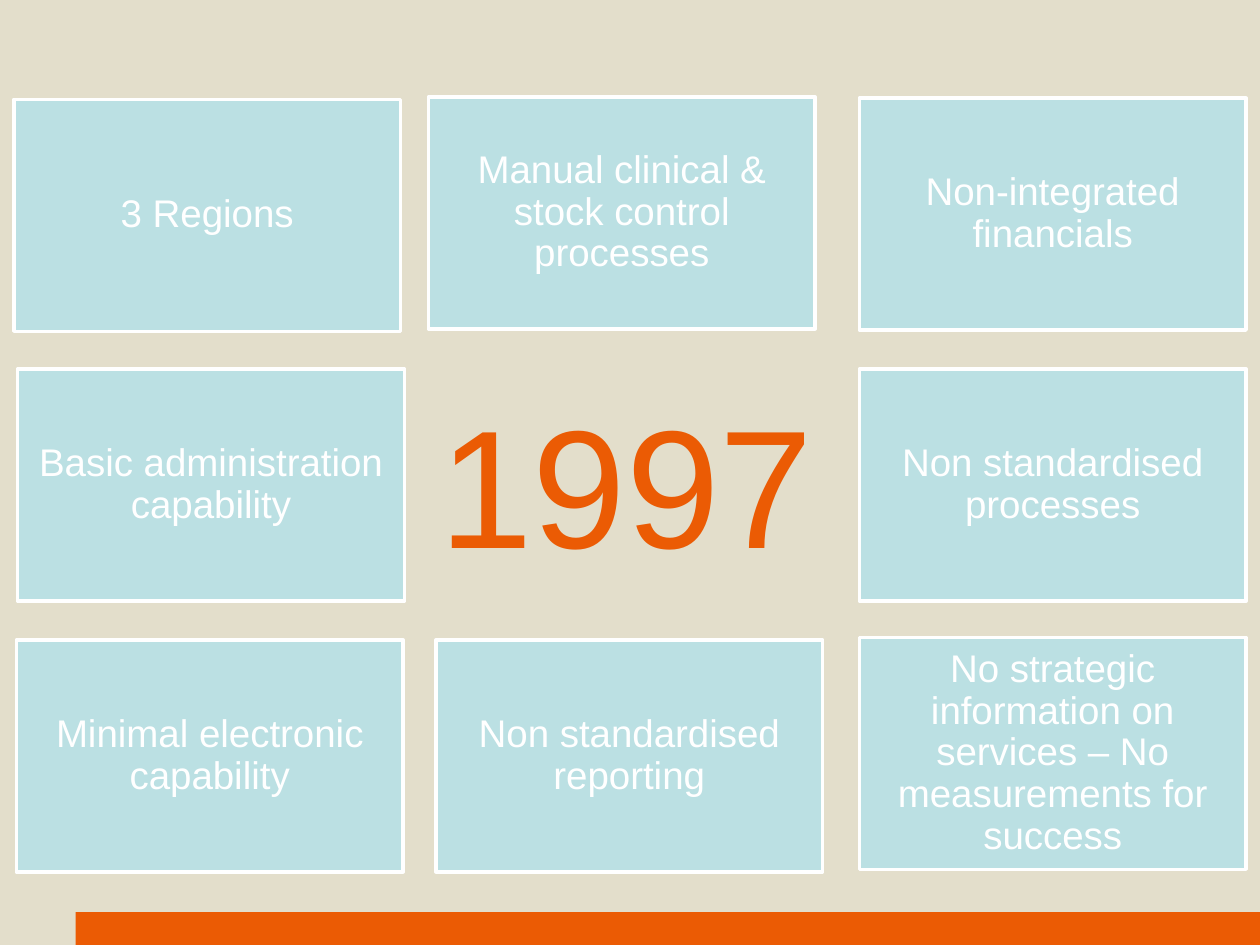
from pptx import Presentation
from pptx import util as u
from pptx.dml.color import RGBColor
from pptx.enum import shapes, text

HUE = {"sand": "E3DECB", "flame": "EB5B04", "aqua": "BBE0E3", "white": "FFFFFF"}
YEAR = "1997"
SIZE = (3.07, 1.84)
CARDS = [
    ("3 Regions", 0.11, 0.79),
    ("Manual clinical & stock control processes", 3.4, 0.77),
    ("Non-integrated financials", 6.82, 0.78),
    ("Basic administration capability", 0.14, 2.93),
    ("Non standardised reporting", 3.46, 5.08),
    ("Non standardised processes", 6.82, 2.93),
    ("Minimal electronic capability", 0.13, 5.08),
    ("No strategic information on services – No measurements for success", 6.82, 5.06),
]
PAD = ("margin_left", "margin_top", "margin_right", "margin_bottom")


def tint(name):
    return RGBColor.from_string(HUE[name])


def paint(fill, name):
    fill.solid()
    fill.fore_color.rgb = tint(name)


def rect(slide, box, fill, edge=None):
    shape = slide.shapes.add_shape(shapes.MSO_SHAPE.RECTANGLE, *map(u.Inches, box))
    shape.shadow.inherit = False
    paint(shape.fill, fill)
    if edge:
        paint(shape.line.fill, edge)
        shape.line.width = u.Pt(2)
    else:
        shape.line.fill.background()
    return shape


def write(shape, words, size, hue, pads, anchor, gap):
    frame = shape.text_frame
    frame.text = words
    form = dict(zip(PAD, map(u.Inches, pads)), word_wrap=True,
                auto_size=text.MSO_AUTO_SIZE.NONE, vertical_anchor=anchor)
    para = frame.paragraphs[0]
    para.font.color.rgb = tint(hue)
    looks = [
        (frame, form),
        (para, {"alignment": text.PP_ALIGN.CENTER, "line_spacing": gap}),
        (para.font, {"name": "Arial", "size": u.Pt(size)}),
    ]
    for part, vals in looks:
        for key, val in vals.items():
            setattr(part, key, val)


def main():
    """Build the slide of 1997 conditions around the year."""
    deck = Presentation()
    deck.slide_width, deck.slide_height = u.Inches(10), u.Inches(7.5)
    slide = deck.slides.add_slide(deck.slide_layouts[5])
    paint(slide.background.fill, "sand")
    rect(slide, (0.6, 7.24, 9.4, 0.26), "flame")
    for words, left, top in CARDS:
        card = rect(slide, (left, top, *SIZE), "aqua", "white")
        write(card, words, 22, "white", [0.09] * 4, text.MSO_ANCHOR.MIDDLE, 0.9)
    title = slide.shapes.title
    spot = (0.65, 2.9, 8.74, 1.11)
    for key, val in zip(("left", "top", "width", "height"), spot):
        setattr(title, key, u.Inches(val))
    write(title, YEAR, 96, "flame", (0, 0.12, 0.1, 0.05), text.MSO_ANCHOR.TOP, 1.0)
    deck.save("out.pptx")


if __name__ == "__main__":
    main()
